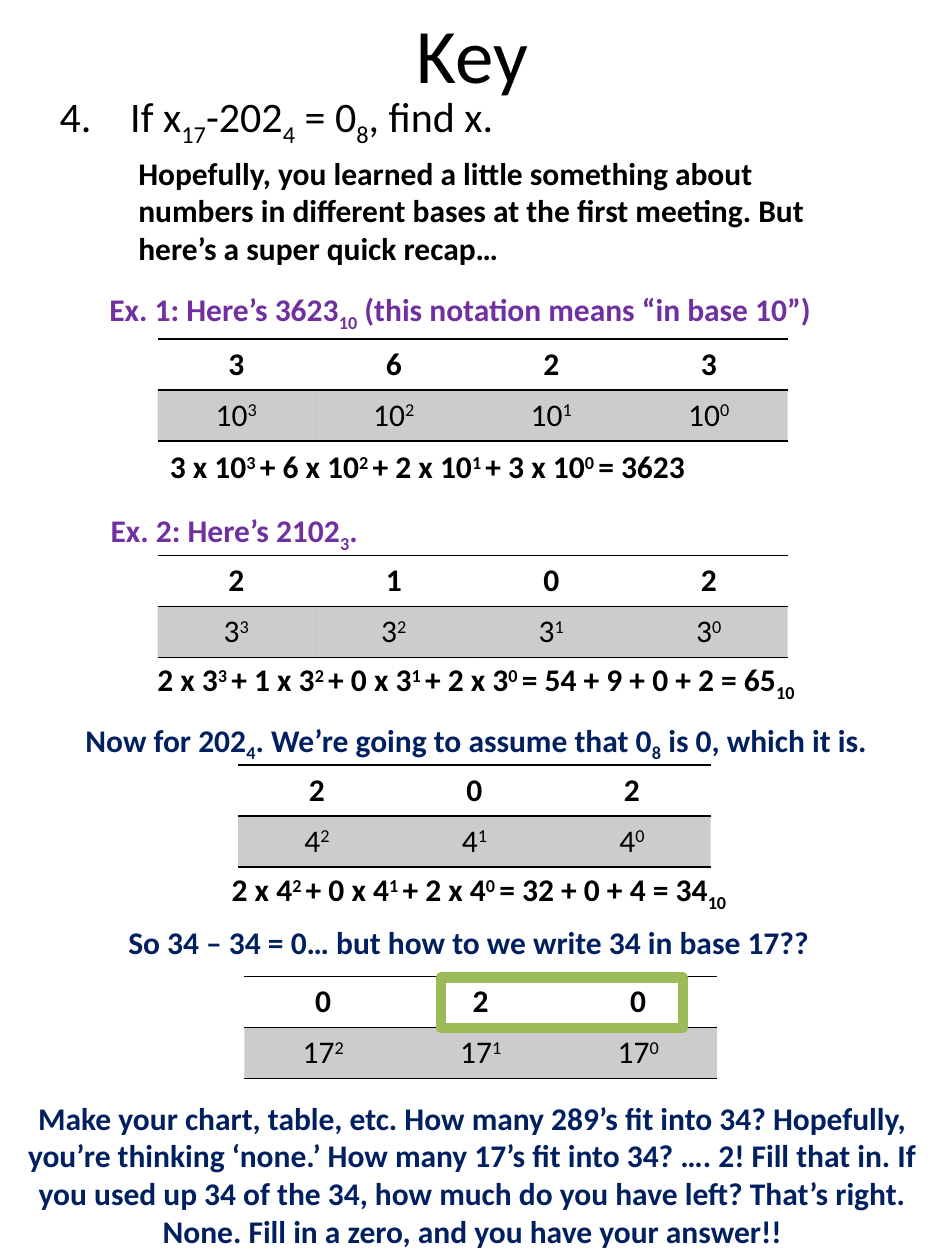
from lxml.etree import SubElement
from pptx import Presentation
from pptx.dml.color import RGBColor
from pptx.enum.shapes import MSO_SHAPE as Shape
from pptx.enum.text import MSO_ANCHOR as Anchor, PP_ALIGN as Align
from pptx.oxml.ns import qn
from pptx.util import Inches, Pt

UNIT = 0.25  # inches per grid step: 30 columns by 40 rows
COLUMNS, ROWS = 30, 40
CELL_WIDTH, CELL_HEIGHT = 5, 1.62
BLACK, PURPLE, NAVY, GREEN = "000000", "7030A0", "002060", "9BBB59"
PLAIN_TABLE = "{2D5ABB26-0587-4C30-8999-92F81FD0307C}"
SHIFTS = {"^": "30000", "_": "-25000"}


def grid(*steps):
    return [Inches(step * UNIT) for step in steps]


def color(value):
    return RGBColor.from_string(value)


def expansion(digits, base, result):
    """Spell a number as a sum of digits times powers of its base."""
    top = len(digits) - 1
    terms = [f"{digit} x {base}|^{top - i} |" for i, digit in enumerate(digits)]
    return "+ ".join(terms) + f"= {result}"


class KeyPage:
    font = "Calibri"
    size = 18

    def __init__(self, deck):
        self.page = deck.slides.add_slide(deck.slide_layouts[5])

    def add_runs(self, para, text, ink=BLACK, bold=True, size=None):
        """Add runs parted by |; a leading ^ raises a run and _ lowers it."""
        for piece in filter(None, text.split("|")):
            shift = SHIFTS.get(piece[0])
            span = para.add_run()
            span.text = piece[1:] if shift else piece
            span.font.name = self.font
            span.font.size = Pt(size or self.size)
            span.font.bold = bold
            span.font.color.rgb = color(ink)
            if shift:
                span._r.get_or_add_rPr().set("baseline", shift)

    def title(self, text, *place):
        box = self.page.shapes.title
        box.left, box.top, box.width, box.height = grid(*place)
        box.text_frame.vertical_anchor = Anchor.MIDDLE
        para = box.text_frame.paragraphs[0]
        para.alignment = Align.CENTER
        self.add_runs(para, text, bold=False, size=44)

    def text(self, text, left, top, width, height=1.6, align=Align.LEFT, **style):
        box = self.page.shapes.add_textbox(*grid(left, top, width, height))
        box.text_frame.word_wrap = True
        para = box.text_frame.paragraphs[0]
        para.alignment = align
        self.add_runs(para, text, **style)
        return para

    def question(self, number, text, *place):
        para = self.text(text, *place, bold=False, size=24)
        props = para._p.get_or_add_pPr()
        indent = Inches(0.56)
        props.set("marL", str(indent))
        props.set("indent", str(-indent))
        SubElement(props, qn("a:buFont"), typeface="+mj-lt")
        SubElement(props, qn("a:buAutoNum"), type="arabicPeriod", startAt=str(number))

    def rule(self, cell, sides):
        for side in sides:
            line = SubElement(cell._tc.get_or_add_tcPr(), qn(f"a:ln{side}"), w=str(Pt(1)))
            fill = SubElement(line, qn("a:solidFill"))
            SubElement(fill, qn("a:srgbClr"), val=BLACK)

    def place_values(self, digits, base, left, top):
        """Table of digits above the matching powers of the base."""
        count = len(digits)
        holder = self.page.shapes.add_table(
            2, count, *grid(left, top, count * CELL_WIDTH, 2 * CELL_HEIGHT))
        table = holder.table
        table.first_row = table.horz_banding = False
        table._tbl.tblPr.find(qn("a:tableStyleId")).text = PLAIN_TABLE
        powers = [f"{base}|^{count - 1 - i}" for i in range(count)]
        for r, row in enumerate((digits, powers)):
            for c, text in enumerate(row):
                cell = table.cell(r, c)
                para = cell.text_frame.paragraphs[0]
                para.alignment = Align.CENTER
                self.add_runs(para, text, bold=r == 0)
                self.rule(cell, "TB")
                if r == 0:
                    cell.fill.background()
                    continue
                cell.fill.solid()
                cell.fill.fore_color.rgb = color(BLACK)
                shade = cell._tc.tcPr.find(qn("a:solidFill"))[0]
                SubElement(shade, qn("a:alpha"), val="20000")

    def frame(self, *place):
        box = self.page.shapes.add_shape(Shape.RECTANGLE, *grid(*place))
        box.shadow.inherit = False
        box.fill.background()
        box.line.color.rgb = color(GREEN)
        box.line.width = Pt(6)


def main():
    deck = Presentation()
    deck.slide_width, deck.slide_height = grid(COLUMNS, ROWS)
    key = KeyPage(deck)

    # Question and introduction
    key.title("Key", 1.5, -1.68, 27, 6.68)
    key.question(4, "If x|_17|-202|_4| = 0|_8|, find x.", 1.5, 2.68, 27, 2)
    key.text("Hopefully, you learned a little something about numbers in different "
             "bases at the first meeting. But here’s a super quick recap…",
             4, 4.68, 22, 4.04)

    # Example 1: base 10
    key.text("Ex. 1: Here’s 3623|_10| (this notation means “in base 10”)",
             3.08, 9, 23.84, ink=PURPLE)
    key.place_values("3623", 10, 5, 10.76)
    key.text(expansion("3623", 10, "3623"), 5, 14, 18)

    # Example 2: base 3
    key.text("Ex. 2: Here’s 2102|_3|.", 3.12, 16.04, 23.84, ink=PURPLE)
    key.place_values("2102", 3, 5, 17.64)
    key.text(expansion("2102", 3, "54 + 9 + 0 + 2 = 65|_10"), 4.6, 20.76, 23)

    # The number in the question: base 4
    key.text("Now for 202|_4|. We’re going to assume that 0|_8| is 0, which it is.",
             2.32, 22.68, 26, ink=NAVY)
    key.place_values("202", 4, 7.56, 24.28)
    key.text(expansion("202", 4, "32 + 0 + 4 = 34|_10"), 6.96, 27.44, 23)

    # Answer in base 17
    key.text("So 34 – 34 = 0… but how to we write 34 in base 17??",
             3.68, 29.12, 24, ink=NAVY)
    key.place_values("020", 17, 7.76, 31)
    key.text("Make your chart, table, etc. How many 289’s fit into 34? Hopefully, "
             "you’re thinking ‘none.’ How many 17’s fit into 34? …. 2! Fill that in. "
             "If you used up 34 of the 34, how much do you have left? That’s right. "
             "None. Fill in a zero, and you have your answer!!",
             0, 34.68, COLUMNS, 5.24, align=Align.CENTER, ink=NAVY)
    key.frame(14, 31.04, 7.68, 1.6)

    deck.save("out.pptx")


if __name__ == "__main__":
    main()
